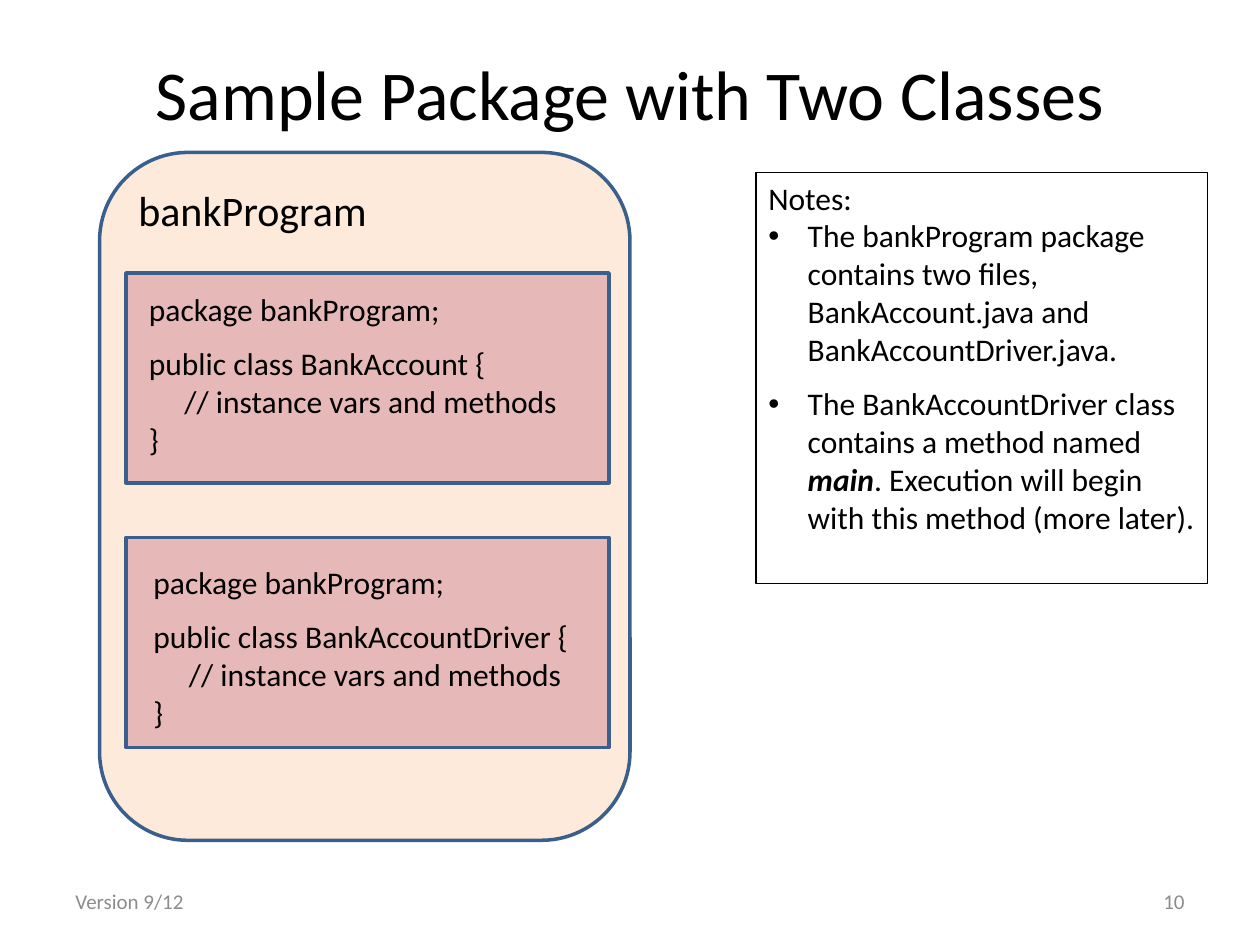
"""Build a slide showing a sample Java package with two classes."""
from lxml.etree import SubElement
from pptx import Presentation
from pptx.dml.color import RGBColor
from pptx.enum.shapes import MSO_SHAPE as Preset
from pptx.enum.text import MSO_ANCHOR as Anchor, PP_ALIGN as Align
from pptx.oxml.ns import qn
from pptx.util import Pt

COLORS = {"text": "000000", "muted": "8C8C8C", "package": "FDEADA",
          "class": "E6B9B8", "border": "3A5F8C"}
FONT = "Calibri"
GAP = 9.5
CODE_INDENT = 20.3
BULLET_INDENT = 22.5

PACKAGE_BOX = (56.9, 87.1, 303.1, 393.1)
NOTES_BOX = (432, 98.6, 258, 234.7)
CLASS_LEFT, CLASS_WIDTH, CLASS_HEIGHT = 72, 276, 120

LABELS = [
    ("Sample Package with Two Classes", (36, 21.6, 648, 62.6),
     {"size": 40, "align": Align.CENTER, "anchor": Anchor.MIDDLE}),
    ("Version 9/12", (36, 500.4, 168, 28.8),
     {"size": 12, "color": "muted", "anchor": Anchor.MIDDLE}),
    ("10", (516, 500.4, 168, 28.8),
     {"size": 12, "color": "muted", "align": Align.RIGHT, "anchor": Anchor.MIDDLE}),
    ("bankProgram", (72, 102, 174, 36), {"size": 24}),
]
CLASSES = [
    {"name": "BankAccount", "top": 156, "text_at": (78, 162)},
    {"name": "BankAccountDriver", "top": 307.2, "text_at": (80.6, 318)},
]
NOTES = [
    ([("Notes:", {})], {}),
    ([("The bankProgram package contains two files, "
       "BankAccount.java and BankAccountDriver.java.", {})],
     {"bullet": True, "space_after": Pt(GAP)}),
    ([("The BankAccountDriver class contains a method named ", {}),
      ("main", {"bold": True, "italic": True}),
      (". Execution will begin with this method (more later).", {})],
     {"bullet": True}),
]


def rgb(name):
    return RGBColor.from_string(COLORS[name])


def set_all(target, values):
    for name, value in values.items():
        setattr(target, name, value)


def code_lines(class_name):
    return [
        ([("package bankProgram;", {})], {"space_after": Pt(GAP)}),
        ([(f"public class {class_name} {{", {})], {}),
        ([("// instance vars and methods", {})], {"indent": CODE_INDENT}),
        ([("}", {})], {}),
    ]


def add_box(slide, preset, box, fill=None, line="border", width=2):
    shape = slide.shapes.add_shape(preset, *map(Pt, box))
    shape.shadow.inherit = False
    if fill:
        shape.fill.solid()
        shape.fill.fore_color.rgb = rgb(fill)
    else:
        shape.fill.background()
    shape.line.color.rgb = rgb(line)
    shape.line.width = Pt(width)
    return shape


def write(shape, paragraphs, size=18, color="text", align=Align.LEFT, anchor=Anchor.TOP):
    frame = shape.text_frame
    set_all(frame, {"word_wrap": True, "vertical_anchor": anchor})
    for index, (runs, options) in enumerate(paragraphs):
        paragraph = frame.add_paragraph() if index else frame.paragraphs[0]
        values = dict(options)
        bullet = values.pop("bullet", False)
        indent = values.pop("indent", BULLET_INDENT if bullet else 0)
        set_all(paragraph, {"alignment": align, **values})
        properties = paragraph._p.get_or_add_pPr()
        if indent:
            properties.set("marL", str(Pt(indent)))
        if bullet:
            properties.set("indent", str(-Pt(indent)))
            SubElement(properties, qn("a:buFont"), typeface="Arial")
            SubElement(properties, qn("a:buChar"), char="•")
        for text, style in runs:
            run = paragraph.add_run()
            run.text = text
            set_all(run.font, {"name": FONT, "size": Pt(size), **style})
            run.font.color.rgb = rgb(color)


def add_text(slide, box, paragraphs, **style):
    write(slide.shapes.add_textbox(*map(Pt, box)), paragraphs, **style)


def main():
    presentation = Presentation()
    set_all(presentation, {"slide_width": Pt(720), "slide_height": Pt(540)})
    slide = presentation.slides.add_slide(presentation.slide_layouts[6])

    add_box(slide, Preset.ROUNDED_RECTANGLE, PACKAGE_BOX, "package")
    for text, box, style in LABELS:
        add_text(slide, box, [([(text, {})], {})], **style)
    for item in CLASSES:
        add_box(slide, Preset.RECTANGLE,
                (CLASS_LEFT, item["top"], CLASS_WIDTH, CLASS_HEIGHT), "class")
        add_text(slide, (*item["text_at"], 264, 104.4), code_lines(item["name"]))
    notes = add_box(slide, Preset.RECTANGLE, NOTES_BOX, line="text", width=0.75)
    write(notes, NOTES)

    presentation.save("out.pptx")


if __name__ == "__main__":
    main()
